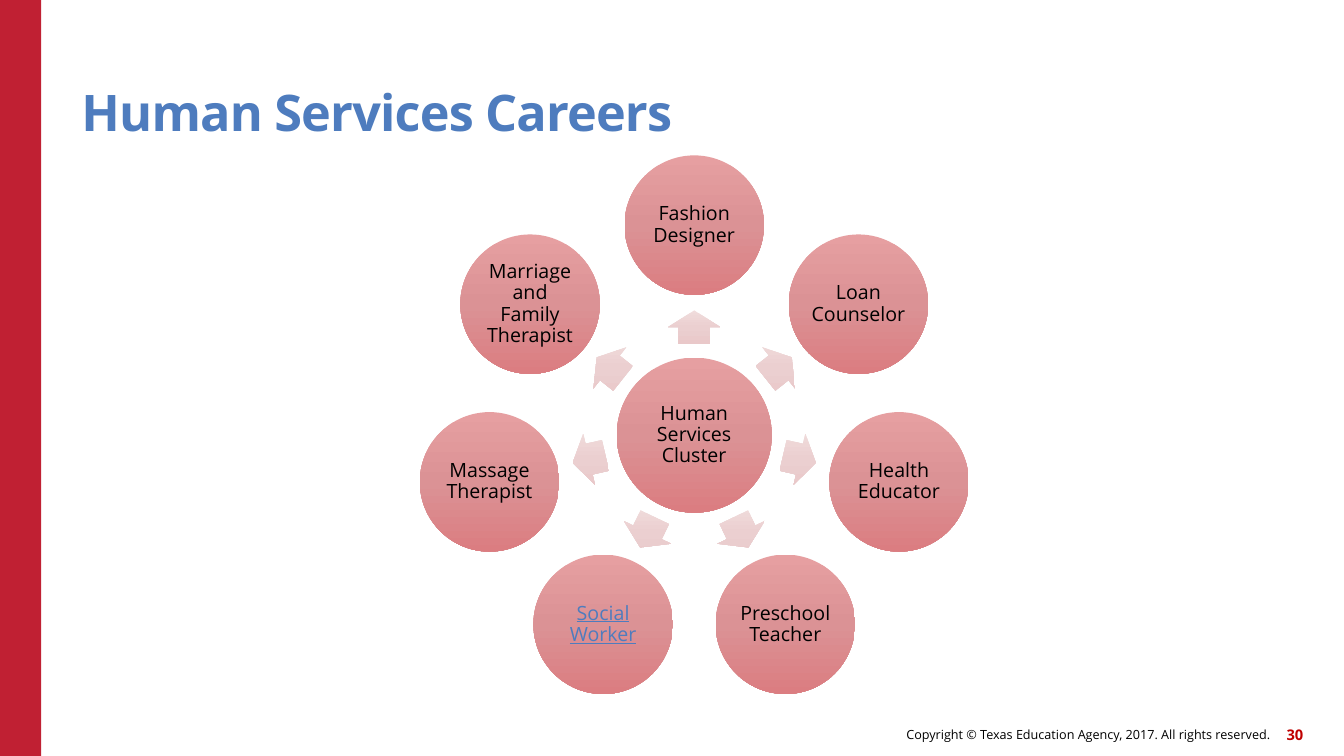
import math

import lxml.etree
import pptx
import pptx.dml.color
import pptx.enum.shapes
import pptx.enum.text
import pptx.oxml.ns
import pptx.util

RGB = pptx.dml.color.RGBColor
KIND = pptx.enum.shapes.MSO_SHAPE
ALIGN = pptx.enum.text.PP_ALIGN
ANCHOR = pptx.enum.text.MSO_ANCHOR
FIT = pptx.enum.text.MSO_AUTO_SIZE
qn = pptx.oxml.ns.qn

BLACK = RGB(0x00, 0x00, 0x00)
BLUE = RGB(0x4E, 0x7C, 0xBE)
RED = RGB(0xC0, 0x20, 0x33)
DARK = RGB(0xC0, 0x00, 0x00)
ROSE = (RGB(0xE6, 0x9F, 0xA1), RGB(0xDB, 0x92, 0x95), RGB(0xDB, 0x7D, 0x81))
BLUSH = (RGB(0xF0, 0xDC, 0xDC), RGB(0xEB, 0xCF, 0xD0), RGB(0xE9, 0xC8, 0xC9))

COLS, ROWS = 32, 18
HUB = (16.53, 10.36)
ORBIT, REACH = 5, 2.57
JOBS = [
    "Fashion Designer",
    "Loan Counselor",
    "Health Educator",
    "Preschool Teacher",
    "Social Worker",
    "Massage Therapist",
    "Marriage and Family Therapist",
]
LINKED = "Social Worker"


class Deck:
    """Draws styled elements on one slide, measured in grid cells."""

    def __init__(self, font):
        self.font = font
        self.prs = pptx.Presentation()
        self.prs.slide_width = pptx.util.Inches(13.33)
        self.prs.slide_height = pptx.util.Inches(7.5)
        self.slide = self.prs.slides.add_slide(self.prs.slide_layouts[5])

    def cells(self, x, y, w, h):
        col = self.prs.slide_width / COLS
        row = self.prs.slide_height / ROWS
        return [round(n * unit) for n, unit in zip((x, y, w, h), (col, row) * 2)]

    def fill_text(self, shape, text, size, color, align, anchor=ANCHOR.MIDDLE, inset=0, bold=False):
        frame = shape.text_frame
        frame.text = text
        frame.word_wrap = True
        frame.auto_size = FIT.NONE
        frame.vertical_anchor = anchor
        frame.margin_left = frame.margin_right = pptx.util.Inches(inset)
        frame.margin_top = frame.margin_bottom = pptx.util.Inches(inset)
        para = frame.paragraphs[0]
        para.alignment = align
        para.font.name = self.font
        para.font.size = pptx.util.Pt(size)
        para.font.bold = bold
        para.font.color.rgb = color
        return para

    def title(self, text, box):
        shape = self.slide.shapes.title
        shape.left, shape.top, shape.width, shape.height = self.cells(*box)
        para = self.fill_text(shape, text, 36, BLUE, ALIGN.LEFT, ANCHOR.BOTTOM, bold=True)
        para.line_spacing = 0.9
        para.runs[0].font._element.set("spc", "-60")

    def label(self, text, box, size, color, bold=False):
        shape = self.slide.shapes.add_textbox(*self.cells(*box))
        self.fill_text(shape, text, size, color, ALIGN.RIGHT, bold=bold)

    def shape(self, kind, box):
        shape = self.slide.shapes.add_shape(kind, *self.cells(*box))
        shape.shadow.inherit = False
        shape.line.fill.background()
        return shape

    def bar(self, box, color):
        fill = self.shape(KIND.RECTANGLE, box).fill
        fill.solid()
        fill.fore_color.rgb = color

    def shade(self, shape, colors):
        shape.fill.gradient()
        shape.fill.gradient_angle = 270
        grad = shape._element.spPr.find(qn("a:gradFill"))
        grad.set("rotWithShape", "0")
        stops = grad.find(qn("a:gsLst"))
        for stop in list(stops):
            stops.remove(stop)
        for pos, color in zip((0, 50000, 100000), colors):
            stop = lxml.etree.SubElement(stops, qn("a:gs"), pos=str(pos))
            lxml.etree.SubElement(stop, qn("a:srgbClr"), val=str(color))

    def center(self, kind, mid, w, h, colors):
        shape = self.shape(kind, (mid[0] - w / 2, mid[1] - h / 2, w, h))
        self.shade(shape, colors)
        return shape

    def disc(self, text, mid, size, linked=False):
        shape = self.center(KIND.OVAL, mid, size, size, ROSE)
        color = BLUE if linked else BLACK
        para = self.fill_text(shape, text, 14, color, ALIGN.CENTER, inset=0.02)
        para.line_spacing = 0.9
        para.font.underline = linked

    def arrow(self, mid, angle):
        shape = self.center(KIND.RIGHT_ARROW, mid, 0.8, 1.25, BLUSH)
        shape.adjustments[0] = 0.6
        shape.adjustments[1] = 0.5
        shape.rotation = angle % 360


def polar(angle, dist):
    """Return the point at an angle and distance from the hub."""
    turn = math.radians(angle)
    return HUB[0] + dist * math.cos(turn), HUB[1] + dist * math.sin(turn)


def main():
    """Build and save the careers slide."""
    deck = Deck("Open Sans")
    deck.bar((0, 0, 0.98, ROWS), RED)
    deck.label("Copyright © Texas Education Agency, 2017. All rights reserved.",
               (14.74, 17.1, 15.5, 0.77), 9, BLACK)
    deck.label("30", (30.02, 17.1, 1.01, 0.77), 10.5, DARK, bold=True)
    deck.title("Human Services Careers", (1.94, 1.08, 26.4, 2.3))
    deck.disc("Human Services Cluster", HUB, 3.69)
    for i, job in enumerate(JOBS):
        angle = 360 * i / len(JOBS) - 90
        deck.arrow(polar(angle, REACH), angle)
        deck.disc(job, polar(angle, ORBIT), 3.32, job == LINKED)
    deck.prs.save("out.pptx")


if __name__ == "__main__":
    main()
